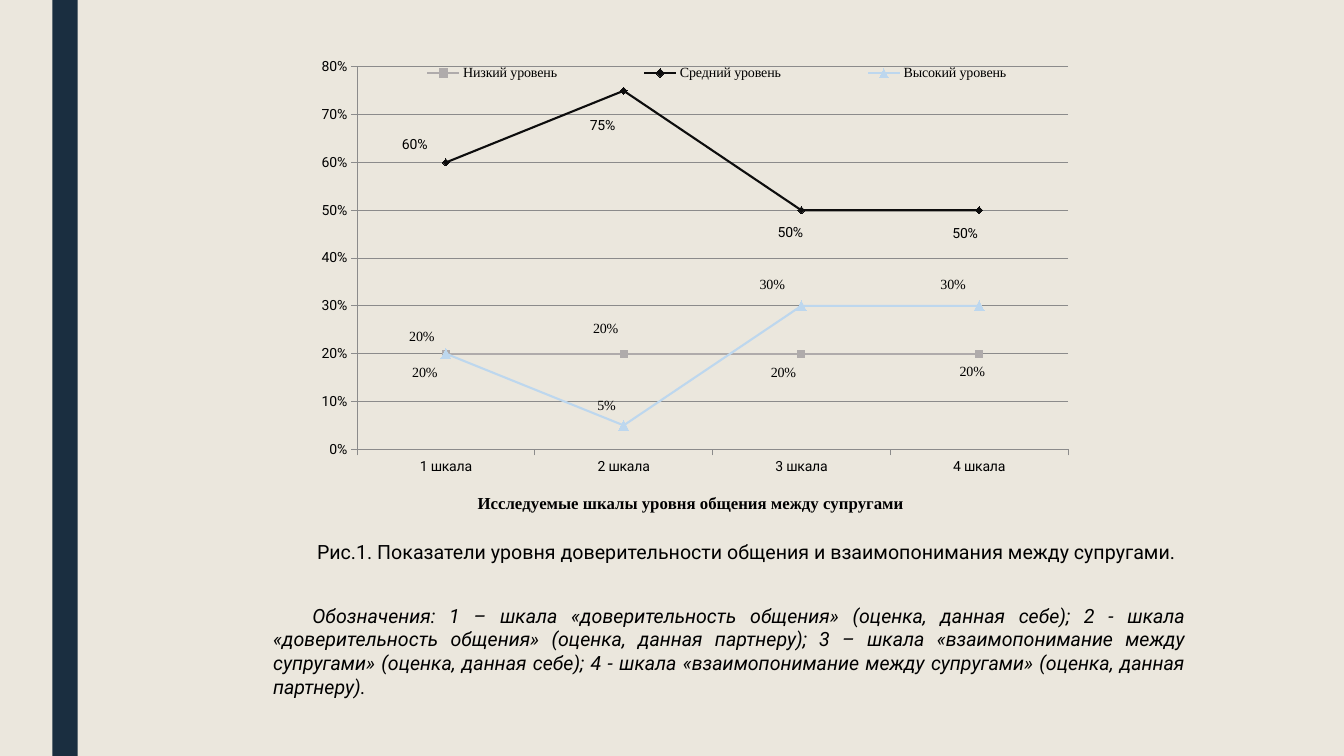
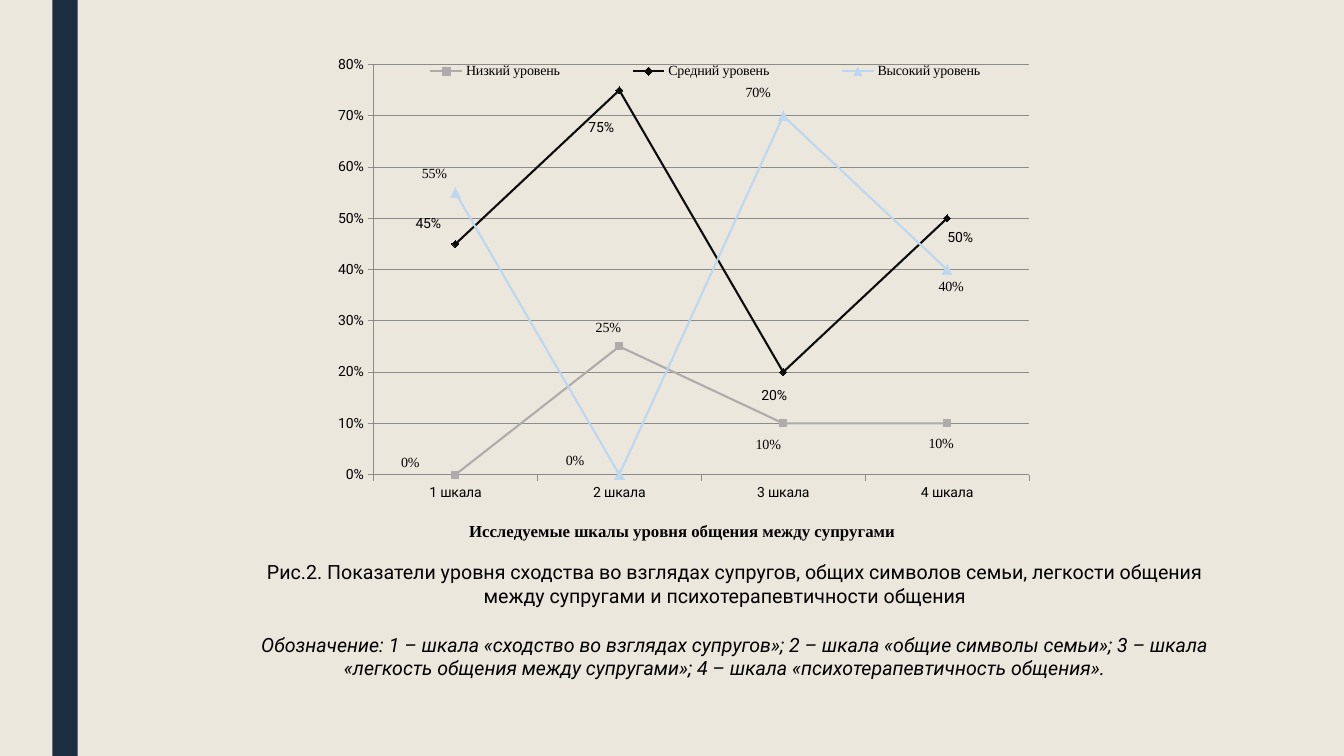
from lxml.etree import SubElement
from pptx import Presentation
from pptx.chart.data import CategoryChartData
from pptx.dml.color import RGBColor
from pptx.enum.chart import (XL_CHART_TYPE, XL_LABEL_POSITION as LABEL_POS,
                             XL_LEGEND_POSITION as LEGEND_POS,
                             XL_MARKER_STYLE as MARKER, XL_TICK_MARK as TICK)
from pptx.enum.shapes import MSO_SHAPE
from pptx.enum.text import PP_ALIGN
from pptx.oxml.ns import qn
from pptx.util import Inches, Pt

# Shared look
PAPER = RGBColor(0xEB, 0xE7, 0xDD)
NAVY = RGBColor(0x1A, 0x2E, 0x40)
BLACK = RGBColor(0, 0, 0)
GRID = RGBColor(0x8B, 0x8B, 0x8B)
GRAY = RGBColor(0xAF, 0xAB, 0xAB)
INK = RGBColor(0x0D, 0x0D, 0x0D)
SKY = RGBColor(0xBD, 0xD7, 0xEE)
SANS, SERIF = "Roboto", "Times New Roman"

CATEGORIES = [f"{n} шкала" for n in range(1, 5)]
AXIS_TITLE = "Исследуемые шкалы уровня общения между супругами "
# Name, colour, marker, marker size, label font
LEVELS = [
    ("Низкий уровень", GRAY, MARKER.SQUARE, 5, SERIF),
    ("Средний уровень", INK, MARKER.DIAMOND, 5, SANS),
    ("Высокий уровень", SKY, MARKER.TRIANGLE, 7, SERIF),
]

# Per level: values in percent, and label offsets from the points in inches
TRUST = [
    ([20, 20, 20, 20], [(-.21, .19), (-.18, -.25), (-.18, .19), (-.07, .18)]),
    ([60, 75, 50, 50], [(-.31, -.18), (-.21, .35), (-.11, .22), (-.14, .23)]),
    ([20, 5, 30, 30], [(-.24, -.17), (-.17, -.2), (-.29, -.21), (-.26, -.21)]),
]
SIMILARITY = [
    ([0, 25, 10, 10], [(-.45, -.12), (-.11, -.19), (-.15, .21), (-.06, .2)]),
    ([45, 75, 20, 50], [(-.27, -.2), (-.18, .37), (-.09, .23), (.13, .19)]),
    ([55, 0, 70, 40], [(-.21, -.19), (-.44, -.14), (-.25, -.23), (.04, .17)]),
]


def set_font(font, size=10, name=SANS, bold=False, italic=False):
    font.size, font.name = Pt(size), name
    font.bold, font.italic = bold, italic
    font.color.rgb = BLACK


def set_layout(parent, index, **values):
    """Give a chart part a manual layout, as child number index."""
    for old in parent.findall(qn("c:layout")):
        parent.remove(old)
    layout = SubElement(parent, qn("c:layout"))
    parent.insert(index, layout)
    manual = SubElement(layout, qn("c:manualLayout"))
    for key, value in values.items():
        SubElement(manual, qn(f"c:{key}")).set("val", str(value))


def add_text(tf, text, align=PP_ALIGN.CENTER, indent=0, before=0,
             spacing=1.0, italic=False):
    p = tf.paragraphs[0] if not tf.text else tf.add_paragraph()
    p.alignment, p.line_spacing, p.space_before = align, spacing, Pt(before)
    p._p.get_or_add_pPr().set("indent", str(Inches(indent)))
    r = p.add_run()
    r.text = text
    set_font(r.font, 14, italic=italic)


def add_base(prs):
    """Blank slide with the paper background and the navy band."""
    s = prs.slides.add_slide(prs.slide_layouts[6])
    s.background.fill.solid()
    s.background.fill.fore_color.rgb = PAPER
    band = s.shapes.add_shape(MSO_SHAPE.RECTANGLE, Inches(.52), 0,
                              Inches(.25), prs.slide_height)
    band.shadow.inherit = False
    band.fill.solid()
    band.fill.fore_color.rgb = NAVY
    band.line.fill.background()
    return s


def style_series(ser, level, offsets, w, h):
    _, color, marker, size, font = level
    ser.smooth = False
    ser.format.line.color.rgb = color
    ser.format.line.width = Pt(1.5)
    ser.marker.style, ser.marker.size = marker, size
    ser.marker.format.fill.solid()
    ser.marker.format.fill.fore_color.rgb = color
    ser.marker.format.line.color.rgb = color
    # Labels, each moved away from its point
    labels = ser.data_labels
    labels.show_value = True
    labels.number_format, labels.number_format_is_linked = "0%", False
    set_font(labels.font, name=font)
    for i in range(len(offsets)):
        label = ser.points[i].data_label
        set_font(label.font, name=font)
        label.position = LABEL_POS.CENTER
    for el, (dx, dy) in zip(labels._element.findall(qn("c:dLbl")), offsets):
        set_layout(el, 1, x=dx / w, y=dy / h)
    for leader in labels._element.findall(qn("c:showLeaderLines")):
        leader.set("val", "0")


def style_axes(chart, title_x):
    cat, val = chart.category_axis, chart.value_axis
    for axis in (cat, val):
        axis.format.line.color.rgb = GRID
        axis.format.line.width = Pt(.75)
        axis.major_tick_mark, axis.minor_tick_mark = TICK.OUTSIDE, TICK.NONE
        set_font(axis.tick_labels.font)
    val.minimum_scale, val.maximum_scale, val.major_unit = 0, .8, .1
    val.tick_labels.number_format = "0%"
    val.tick_labels.number_format_is_linked = False
    val.major_gridlines.format.line.color.rgb = GRID
    val.major_gridlines.format.line.width = Pt(.75)
    # Title under the categories
    r = cat.axis_title.text_frame.paragraphs[0].add_run()
    r.text = AXIS_TITLE
    set_font(r.font, 12, SERIF, bold=True)
    set_layout(cat.axis_title._element, 1, xMode="edge", yMode="edge",
               x=title_x, y=.91)


def add_level_chart(s, box, rows, title_x):
    x, y, w, h = box
    data = CategoryChartData(number_format="0%")
    data.categories = CATEGORIES
    for level, (values, _) in zip(LEVELS, rows):
        data.add_series(level[0], [v / 100 for v in values])
    chart = s.shapes.add_chart(XL_CHART_TYPE.LINE_MARKERS, Inches(x), Inches(y),
                               Inches(w), Inches(h), data).chart
    chart.has_title = False
    set_font(chart.font)
    plot = chart.plots[0]
    plot.vary_by_categories = False
    for ser, level, (_, offsets) in zip(plot.series, LEVELS, rows):
        style_series(ser, level, offsets, w, h)
    style_axes(chart, title_x)
    # Legend over the top of the plot
    chart.has_legend = True
    legend = chart.legend
    legend.position = LEGEND_POS.TOP
    legend.include_in_layout = True
    set_font(legend.font, name=SERIF)
    set_layout(legend._element, 1, xMode="edge", yMode="edge",
               x=.07, y=.01, w=.86, h=.05)
    set_layout(chart._chartSpace.chart.plotArea, 0, layoutTarget="inner",
               xMode="edge", yMode="edge",
               x=8.4 / 100, y=2.2 / 100, w=82.2 / 100, h=80.4 / 100)


def add_caption(s, box, caption, key, caption_format, key_format):
    tf = s.shapes.add_textbox(*map(Inches, box)).text_frame
    tf.word_wrap = True
    add_text(tf, caption, **caption_format)
    add_text(tf, key, italic=True, **key_format)


def trust_slide(prs):
    s = add_base(prs)
    add_level_chart(s, (2.82, .56, 8.58, 4.72), TRUST, .22)
    add_caption(
        s, (2.61, 5.17, 9.25, 1.57),
        "Рис.1. Показатели уровня доверительности общения и взаимопонимания "
        "между супругами. ",
        "Обозначения: 1 – шкала «доверительность общения» (оценка, данная себе); "
        "2 - шкала «доверительность общения» (оценка, данная партнеру); "
        "3 – шкала «взаимопонимание между супругами» (оценка, данная себе); "
        "4 - шкала «взаимопонимание между супругами» (оценка, данная партнеру).",
        dict(indent=.39, spacing=1.61),
        dict(indent=.39, before=28.5, align=PP_ALIGN.JUSTIFY))


def similarity_slide(prs):
    s = add_base(prs)
    add_level_chart(s, (3.04, .53, 7.91, 5.06), SIMILARITY, .2)
    add_caption(
        s, (2.13, 5.51, 10.12, 1.75),
        "Рис.2. Показатели уровня сходства во взглядах супругов, общих символов "
        "семьи, легкости общения между супругами и психотерапевтичности общения",
        "Обозначение: 1 – шкала «сходство во взглядах супругов»; "
        "2 – шкала «общие символы семьи»; "
        "3 – шкала «легкость общения между супругами»; "
        "4 – шкала «психотерапевтичность общения».",
        dict(indent=.2), dict(indent=.2, before=18))


def main():
    prs = Presentation()
    prs.slide_width, prs.slide_height = Inches(13.33), Inches(7.5)
    trust_slide(prs)
    similarity_slide(prs)
    prs.save("out.pptx")


if __name__ == "__main__":
    main()
